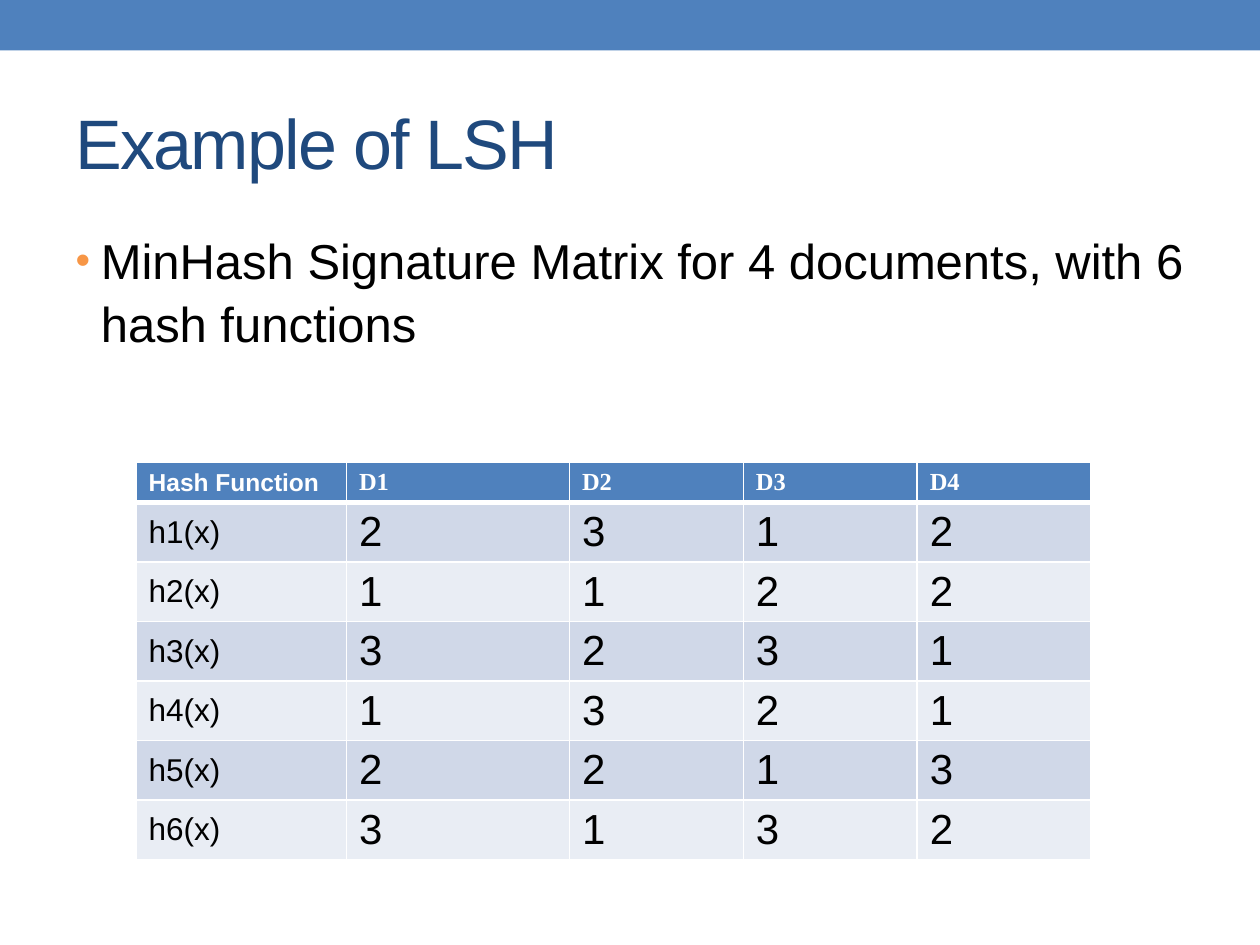
from lxml import etree
from pptx import Presentation
from pptx.dml.color import RGBColor
from pptx.enum.shapes import MSO_SHAPE as Shape
from pptx.enum.text import MSO_ANCHOR as Anchor, MSO_AUTO_SIZE as Fit, PP_ALIGN as Align
from pptx.oxml.ns import qn
from pptx.util import Inches, Pt

# Content
TITLE = "Example of LSH"
POINT = "MinHash Signature Matrix for 4 documents, with 6 hash functions"
HEAD = ["Hash Function", "D1", "D2", "D3", "D4"]
HASHES = [
    (2, 3, 1, 2),
    (1, 1, 2, 2),
    (3, 2, 3, 1),
    (1, 3, 2, 1),
    (2, 2, 1, 3),
    (3, 1, 3, 2),
]
ROWS = [HEAD] + [[f"h{n}(x)", *vals] for n, vals in enumerate(HASHES, 1)]
COLS = [1.67, 1.77, 1.38, 1.38, 1.38]
HEAD_H, ROW_H = 0.31, 0.47
BLUE, NAVY, ORANGE = "4F81BD", "1F497D", "F79646"
WHITE, BLACK = "FFFFFF", "000000"
BANDS = ["D0D8E8", "E9EDF4"]


def paint(fill, color):
    fill.solid()
    fill.fore_color.rgb = RGBColor.from_string(color)


def style(font, size, color, name="Arial", bold=False):
    font.size, font.name, font.bold = Pt(size), name, bold
    paint(font.fill, color)


def place(shape, left, top, width, height):
    shape.left, shape.top = Inches(left), Inches(top)
    shape.width, shape.height = Inches(width), Inches(height)


def add(parent, tag, **attrs):
    node = etree.SubElement(parent, qn(tag))
    for key, val in attrs.items():
        node.set(key, str(val))
    return node


def border(cell, widths):
    props = cell._tc.get_or_add_tcPr()
    for spot, (side, width) in enumerate(widths.items()):
        line = add(props, f"a:ln{side}", w=Pt(width))
        add(add(line, "a:solidFill"), "a:srgbClr", val=WHITE)
        props.insert(spot, line)  # borders come before the fill


prs = Presentation()
prs.slide_width, prs.slide_height = Inches(10), Inches(7.5)
slide = prs.slides.add_slide(prs.slide_layouts[1])

# Top band, behind the rest
band = slide.shapes.add_shape(Shape.RECTANGLE, 0, 0, Inches(10), Inches(0.4))
band.shadow.inherit = False
paint(band.fill, BLUE)
band.line.fill.background()
slide.shapes._spTree.insert(2, band._element)

# Title
title = slide.shapes.title
place(title, 0.5, 0.58, 9, 1.08)
frame = title.text_frame
frame.text, frame.auto_size = TITLE, Fit.NONE
frame.vertical_anchor = Anchor.MIDDLE
para = frame.paragraphs[0]
para.alignment = Align.LEFT
style(para.font, 40, NAVY)
para.runs[0].font._element.set("spc", "-100")

# Bullet
body = slide.placeholders[1]
place(body, 0.5, 1.75, 9, 1.5)
frame = body.text_frame
frame.text, frame.auto_size = POINT, Fit.NONE
para = frame.paragraphs[0]
style(para.font, 28, BLACK)
para.line_spacing, para.space_before = 1.07, Pt(5.6)
props = para._p.get_or_add_pPr()
props.set("marL", str(Inches(0.2)))
props.set("indent", str(Inches(-0.2)))
marks = [
    add(props, "a:buClr"),
    add(props, "a:buSzPct", val=85000),
    add(props, "a:buFont", typeface="Arial"),
    add(props, "a:buChar", char="•"),
]
add(marks[0], "a:srgbClr", val=ORANGE)
props.append(props.find(qn("a:defRPr")))  # run defaults come last

# Signature matrix
height = HEAD_H + ROW_H * len(HASHES)
table = slide.shapes.add_table(
    len(ROWS), len(COLS), Inches(1.08), Inches(3.67),
    Inches(sum(COLS)), Inches(height)).table
for col, width in zip(table.columns, COLS):
    col.width = Inches(width)
for r, row in enumerate(ROWS):
    top = r == 0
    table.rows[r].height = Inches(HEAD_H if top else ROW_H)
    for c, text in enumerate(row):
        cell = table.cell(r, c)
        cell.text = str(text)
        cell.vertical_anchor = Anchor.TOP if top else Anchor.MIDDLE
        paint(cell.fill, BLUE if top else BANDS[(r - 1) % 2])
        font = cell.text_frame.paragraphs[0].font
        if top:
            style(font, 14, WHITE, "Times New Roman" if c else "Arial", True)
        else:
            style(font, 24 if c else 18, BLACK)
        border(cell, {"L": 1, "R": 1, "T": 3 if r == 1 else 1, "B": 3 if top else 1})

prs.save("out.pptx")
